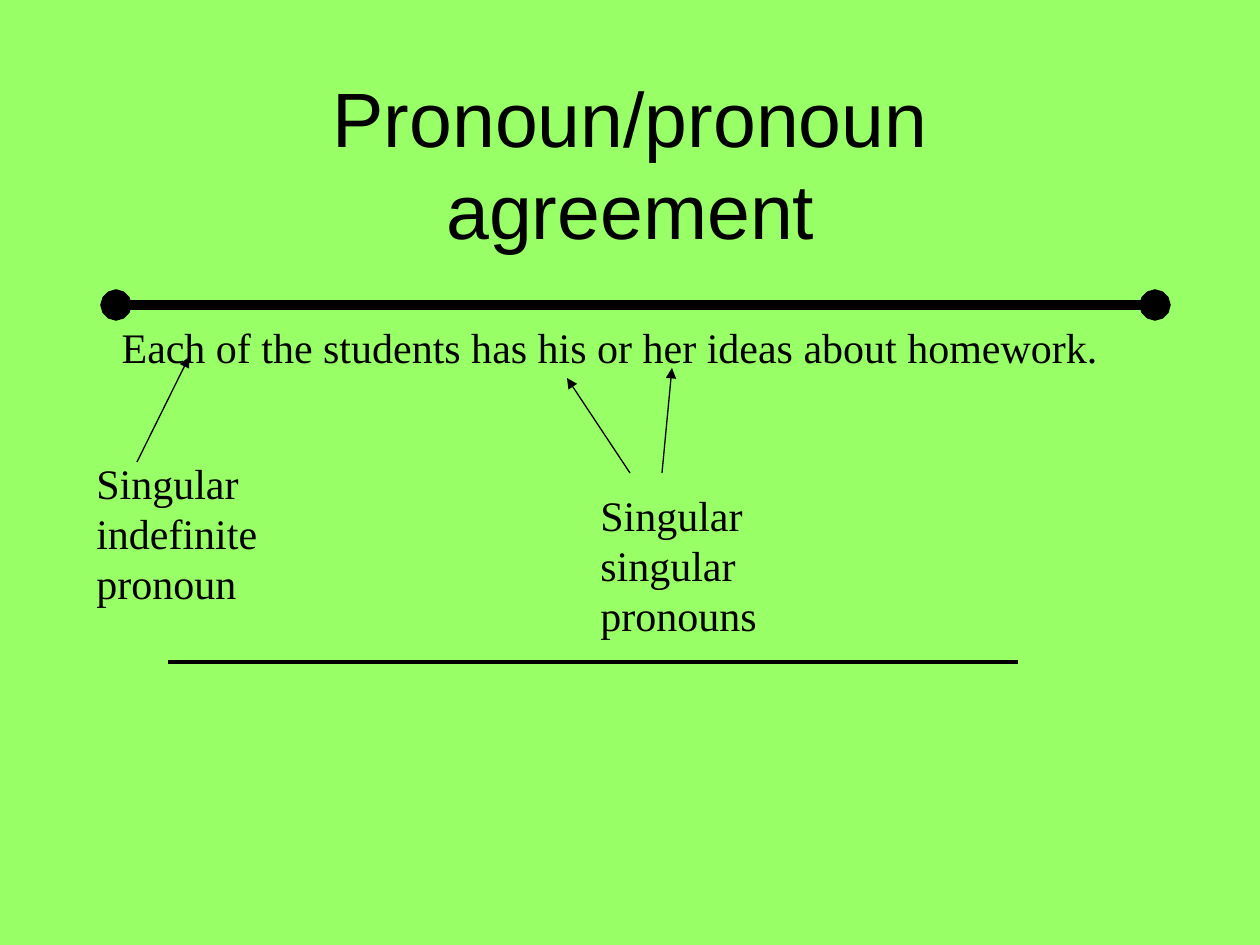
from pptx import Presentation
from pptx.dml.color import RGBColor
from pptx.enum.shapes import MSO_CONNECTOR as Connector
from pptx.enum.text import MSO_ANCHOR as Anchor, PP_ALIGN as Align
from pptx.oxml.ns import qn
from pptx.util import Emu, Pt
from lxml.etree import SubElement

BLACK = RGBColor(0x00, 0x00, 0x00)
LIME = RGBColor(0x99, 0xFF, 0x66)
PX_PER_INCH = 126


def px(length):
    return Emu(round(length * 914400 / PX_PER_INCH))


class SlideBuilder:
    title_font = "Arial"
    body_font = "Times New Roman"

    def __init__(self, slide):
        self.slide = slide
        fill = slide.background.fill
        fill.solid()
        fill.fore_color.rgb = LIME

    def add_run(self, paragraph, text, font, size):
        run = paragraph.add_run()
        run.text = text
        run.font.name = font
        run.font.size = Pt(size)
        run.font.color.rgb = BLACK

    def title(self, lines, left, top, width, height):
        shape = self.slide.shapes.title
        shape.left, shape.top = px(left), px(top)
        shape.width, shape.height = px(width), px(height)
        frame = shape.text_frame
        frame.word_wrap = True
        frame.vertical_anchor = Anchor.MIDDLE
        paragraph = frame.paragraphs[0]
        paragraph.alignment = Align.CENTER
        for index, line in enumerate(lines):
            if index:
                paragraph.add_line_break()
            self.add_run(paragraph, line, self.title_font, 44)

    def text(self, text, left, top, width, height, alignment=Align.LEFT):
        shape = self.slide.shapes.add_textbox(px(left), px(top), px(width), px(height))
        frame = shape.text_frame
        frame.word_wrap = True
        paragraph = frame.paragraphs[0]
        paragraph.alignment = alignment
        paragraph.space_before = Pt(3)
        self.add_run(paragraph, text, self.body_font, 24)

    def line(self, start, end, width, head=None, tail=None):
        connector = self.slide.shapes.add_connector(
            Connector.STRAIGHT, *map(px, start + end))
        connector.line.color.rgb = BLACK
        connector.line.width = Pt(width)
        outline = connector.line._get_or_add_ln()
        for tag, kind in (("a:headEnd", head), ("a:tailEnd", tail)):
            if kind:
                SubElement(outline, qn(tag), type=kind)
        SubElement(connector._element.spPr, qn("a:effectLst"))

    def arrow(self, start, end):
        self.line(start, end, 0.75, tail="triangle")


def main():
    presentation = Presentation()
    presentation.slide_width, presentation.slide_height = px(1260), px(945)
    builder = SlideBuilder(presentation.slides.add_slide(presentation.slide_layouts[5]))

    builder.title(["Pronoun/pronoun", "agreement"], 95, 84, 1071, 158)
    builder.line((116, 305), (1155, 305), 6, head="oval", tail="oval")
    builder.text("Each of the students has his or her ideas about homework. ",
                 95, 315, 1040, 63, Align.CENTER)
    builder.text("Singular indefinite pronoun", 84, 451, 199, 164)
    builder.text("Singular singular pronouns", 588, 483, 199, 164)
    for start, end in (((137, 462), (189, 357)),
                       ((630, 473), (567, 378)),
                       ((662, 473), (672, 368))):
        builder.arrow(start, end)
    builder.line((168, 662), (1018, 662), 2.25)

    presentation.save("out.pptx")


if __name__ == "__main__":
    main()
